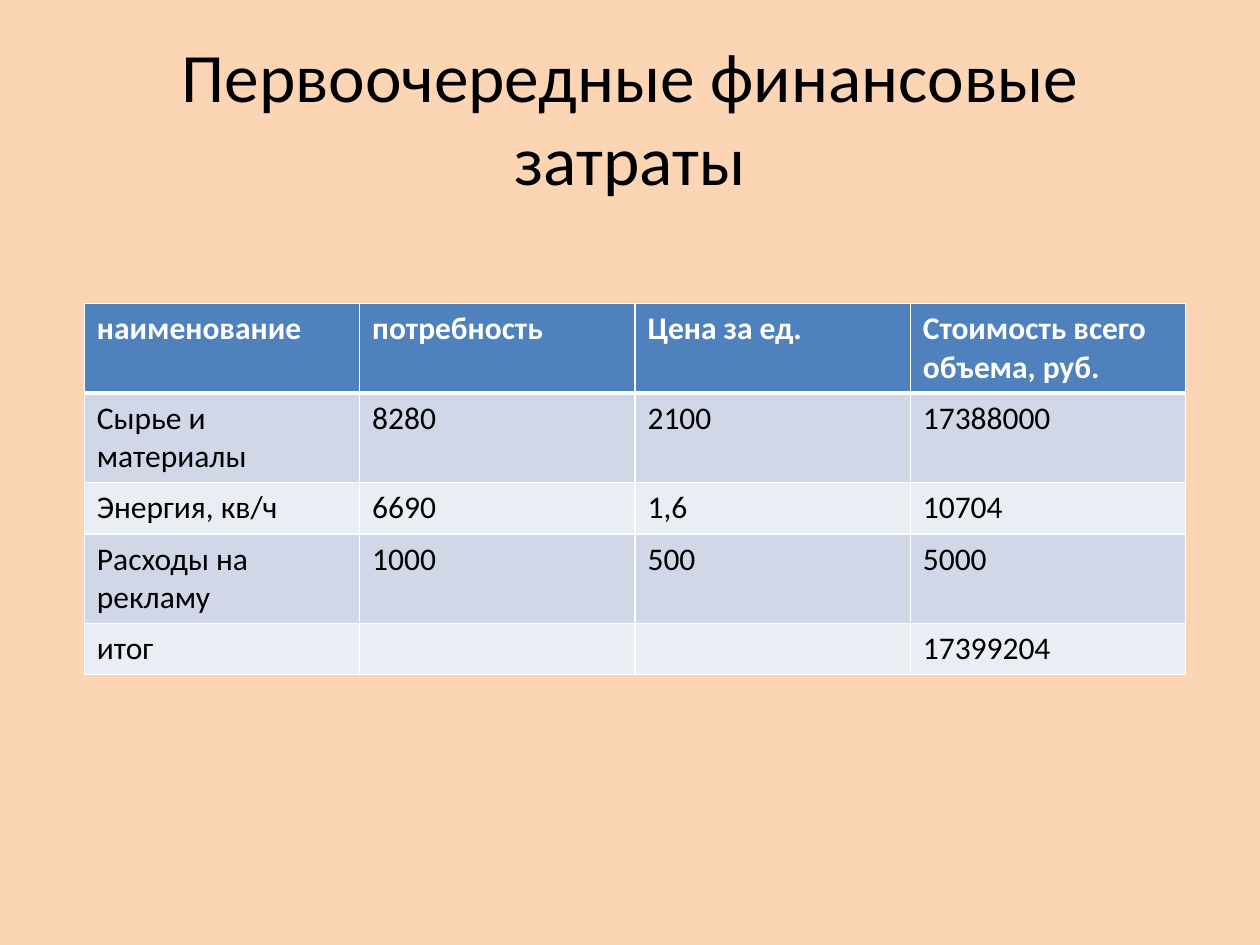
import pptx
import pptx.dml.color
import pptx.enum.text
import pptx.oxml
import pptx.oxml.ns
import pptx.util
from lxml import etree
from pptx.util import Cm

TITLE = "Первоочередные финансовые затраты"
COSTS = [
    ["наименование", "потребность", "Цена за ед.", "Стоимость всего объема, руб."],
    ["Сырье и материалы", "8280", "2100", "17388000"],
    ["Энергия, кв/ч", "6690", "1,6", "10704"],
    ["Расходы на рекламу", "1000", "500", "5000"],
    ["итог", "", "", "17399204"],
]


def color(value):
    return pptx.dml.color.RGBColor.from_string(value)


def write(frame, text, size=18, ink="000000", bold=False, font="Calibri", align="LEFT"):
    paragraph = frame.paragraphs[0]
    paragraph.alignment = getattr(pptx.enum.text.PP_ALIGN, align)
    if not text:
        paragraph.font.size = pptx.util.Pt(size)
        return
    run = paragraph.add_run()
    run.text = text
    run.font.name = font
    run.font.size = pptx.util.Pt(size)
    run.font.bold = bold
    run.font.color.rgb = color(ink)


class CostSlide:
    """Holds the palette and the slide that the elements are added to."""

    background = "FCD5B5"
    header_fill = "4F81BD"
    band_fills = ["E9EDF4", "D0D8E8"]
    rule = "FFFFFF"

    def __init__(self, deck):
        self.slide = deck.slides.add_slide(deck.slide_layouts[5])
        fill = self.slide.background.fill
        fill.solid()
        fill.fore_color.rgb = color(self.background)

    def title(self, text, left, top, width, height):
        heading = self.slide.shapes.title
        heading.left, heading.top, heading.width, heading.height = left, top, width, height
        frame = heading.text_frame
        frame.word_wrap = True
        frame.auto_size = pptx.enum.text.MSO_AUTO_SIZE.NONE
        frame.vertical_anchor = pptx.enum.text.MSO_ANCHOR.MIDDLE
        write(frame, text, size=39.6, align="CENTER")

    def borders(self, cell, **widths):
        properties = cell._tc.get_or_add_tcPr()
        qn = pptx.oxml.ns.qn
        for side in "LRTB":
            line = etree.SubElement(properties, qn(f"a:ln{side}"))
            line.set("w", str(pptx.util.Pt(widths.get(side, 1))))
            solid = etree.SubElement(line, qn("a:solidFill"))
            etree.SubElement(solid, qn("a:srgbClr")).set("val", self.rule)

    def table(self, rows, left, top, width, row_height):
        grid = self.slide.shapes.add_table(
            len(rows), len(rows[0]), left, top, width, row_height * len(rows)
        ).table
        for r, row in enumerate(rows):
            header = r == 0
            for c, text in enumerate(row):
                cell = grid.cell(r, c)
                self.borders(cell, T=3 if r == 1 else 1, B=3 if header else 1)
                cell.fill.solid()
                cell.fill.fore_color.rgb = color(
                    self.header_fill if header else self.band_fills[r % 2]
                )
                write(cell.text_frame, text, bold=header,
                      ink="FFFFFF" if header else "000000")


def main():
    deck = pptx.Presentation()
    deck.slide_width, deck.slide_height = Cm(25.4), Cm(19.05)
    costs = CostSlide(deck)
    costs.title(TITLE, Cm(1.27), Cm(0.76), Cm(22.86), Cm(3.18))
    costs.table(COSTS, Cm(1.7), Cm(6.12), Cm(22.2), Cm(1.03))
    deck.save("out.pptx")


if __name__ == "__main__":
    main()
